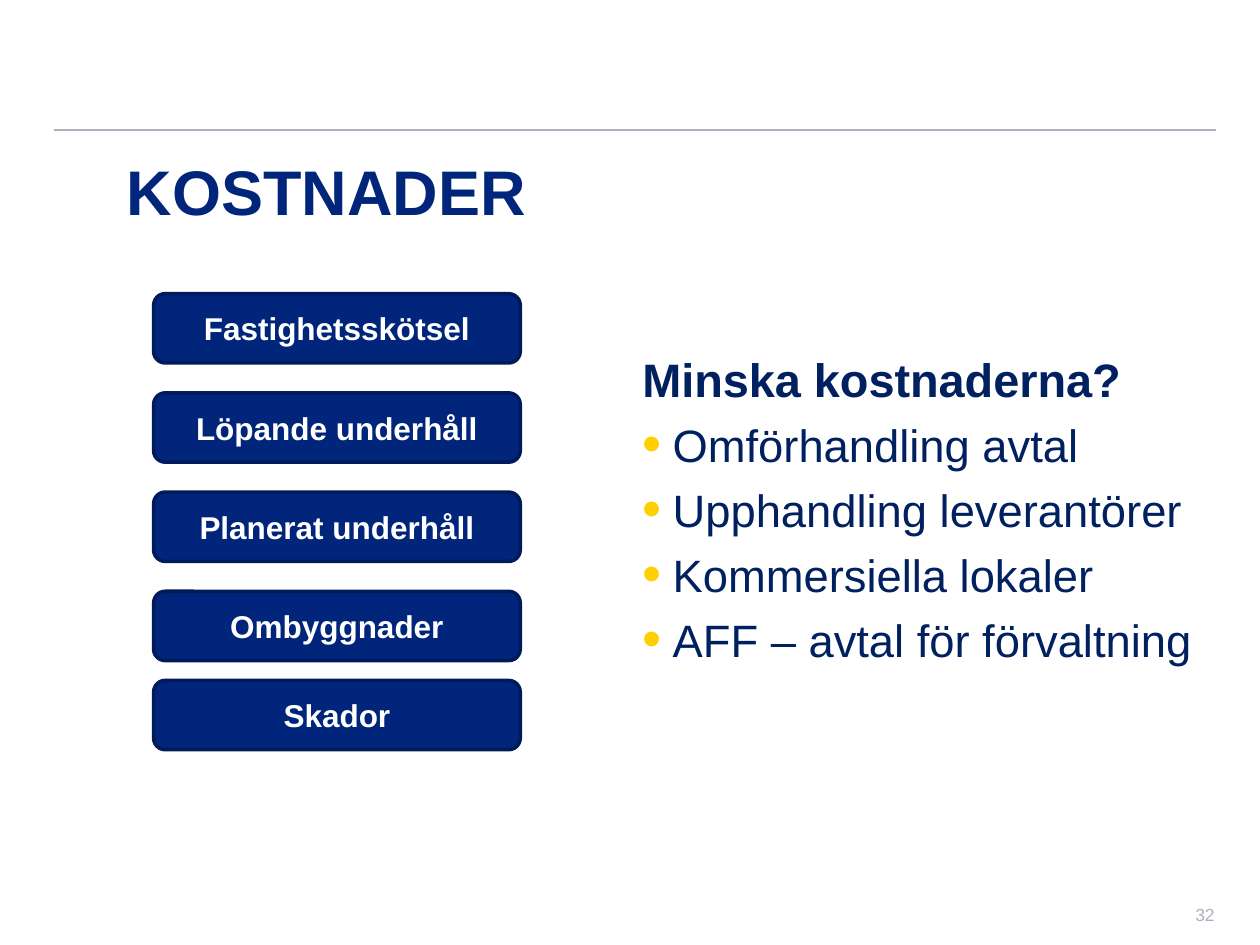
import pptx
import pptx.util
import pptx.dml.color
import pptx.enum.shapes
import pptx.enum.text
import pptx.oxml.ns
from lxml import etree

Pt = pptx.util.Pt
ALIGN = pptx.enum.text.PP_ALIGN
ANCHOR = pptx.enum.text.MSO_ANCHOR
SHAPE = pptx.enum.shapes.MSO_SHAPE
COLORS = {
    "blue": "00257A", "edge": "001B5A", "ink": "002060",
    "gold": "FFCF00", "gray": "B5ACBD", "white": "FFFFFF",
}


def color(name):
    return pptx.dml.color.RGBColor.from_string(COLORS[name])


def style(para, size, tint, bold=False):
    for run in para.runs:
        run.font.name = "Arial"
        run.font.size = Pt(size)
        run.font.bold = bold
        run.font.color.rgb = color(tint)


def add_text(slide, box, lines, anchor):
    frame = slide.shapes.add_textbox(*map(Pt, box)).text_frame
    frame.word_wrap = True
    frame.vertical_anchor = anchor
    frame.text = "\n".join(lines)
    return frame.paragraphs


def add_bullet(para):
    props = para._p.get_or_add_pPr()
    tags = (
        ("buClr", {}),
        ("buSzPct", {"val": "120000"}),
        ("buFont", {"typeface": "Arial"}),
        ("buChar", {"char": "•"}),
    )
    for tag, attrs in tags:
        node = etree.SubElement(props, pptx.oxml.ns.qn("a:" + tag), attrs)
        if tag == "buClr":
            etree.SubElement(node, pptx.oxml.ns.qn("a:srgbClr"), val=COLORS["gold"])


def add_rule(slide, box):
    left, top, width, height = map(Pt, box)
    line = slide.shapes.add_connector(
        pptx.enum.shapes.MSO_CONNECTOR.STRAIGHT, left, top, left + width, top + height)
    line.line.color.rgb = color("gray")
    line.line.width = Pt(1.5)
    etree.SubElement(line._element.spPr, pptx.oxml.ns.qn("a:effectLst"))


def add_title(slide, box, text):
    para = add_text(slide, box, [text], ANCHOR.BOTTOM)[0]
    style(para, 36, "blue", True)


def add_number(slide, box, text):
    para = add_text(slide, box, [text], ANCHOR.MIDDLE)[0]
    para.alignment = ALIGN.RIGHT
    style(para, 10, "gray")


def add_list(slide, box, head, items):
    paras = add_text(slide, box, [head, *items], ANCHOR.TOP)
    for para in paras:
        props = para._p.get_or_add_pPr()
        props.set("marL", str(Pt(17.3)))
        props.set("indent", str(-Pt(17.3)))
    style(paras[0], 26.8, "ink", True)
    for para in paras[1:]:
        para.space_before = Pt(6)
        add_bullet(para)
        style(para, 25.9, "ink")


def add_stack(slide, box, names):
    left, top, width, height = box
    tall, last = 39.6, len(names) - 1
    step = 56.7
    for i, name in enumerate(names):
        y = top + height - tall if i == last else top + i * step
        card = slide.shapes.add_shape(
            SHAPE.FLOWCHART_ALTERNATE_PROCESS, Pt(left), Pt(y), Pt(width), Pt(tall))
        card.shadow.inherit = False
        card.fill.solid()
        card.fill.fore_color.rgb = color("blue")
        card.line.color.rgb = color("edge")
        card.line.width = Pt(2)
        frame = card.text_frame
        frame.text = name
        frame.vertical_anchor = ANCHOR.MIDDLE
        frame.paragraphs[0].alignment = ALIGN.CENTER
        style(frame.paragraphs[0], 18, "white", True)


def main():
    deck = pptx.Presentation()
    deck.slide_width, deck.slide_height = Pt(720), Pt(540)
    slide = deck.slides.add_slide(deck.slide_layouts[6])
    add_rule(slide, (31, 74.2, 663.8, 0))
    add_title(slide, (65.5, 77, 631.4, 56.9), "KOSTNADER")
    add_number(slide, (588.2, 515.5, 113, 14.4), "32")
    add_list(slide, (360, 196.6, 345.6, 196.6), "Minska kostnaderna?", [
        "Omförhandling avtal", "Upphandling leverantörer",
        "Kommersiella lokaler", "AFF – avtal för förvaltning",
    ])
    add_stack(slide, (87.8, 167.8, 209.5, 260.6), [
        "Fastighetsskötsel", "Löpande underhåll", "Planerat underhåll",
        "Ombyggnader", "Skador",
    ])


    deck.save("out.pptx")


if __name__ == "__main__":
    main()
